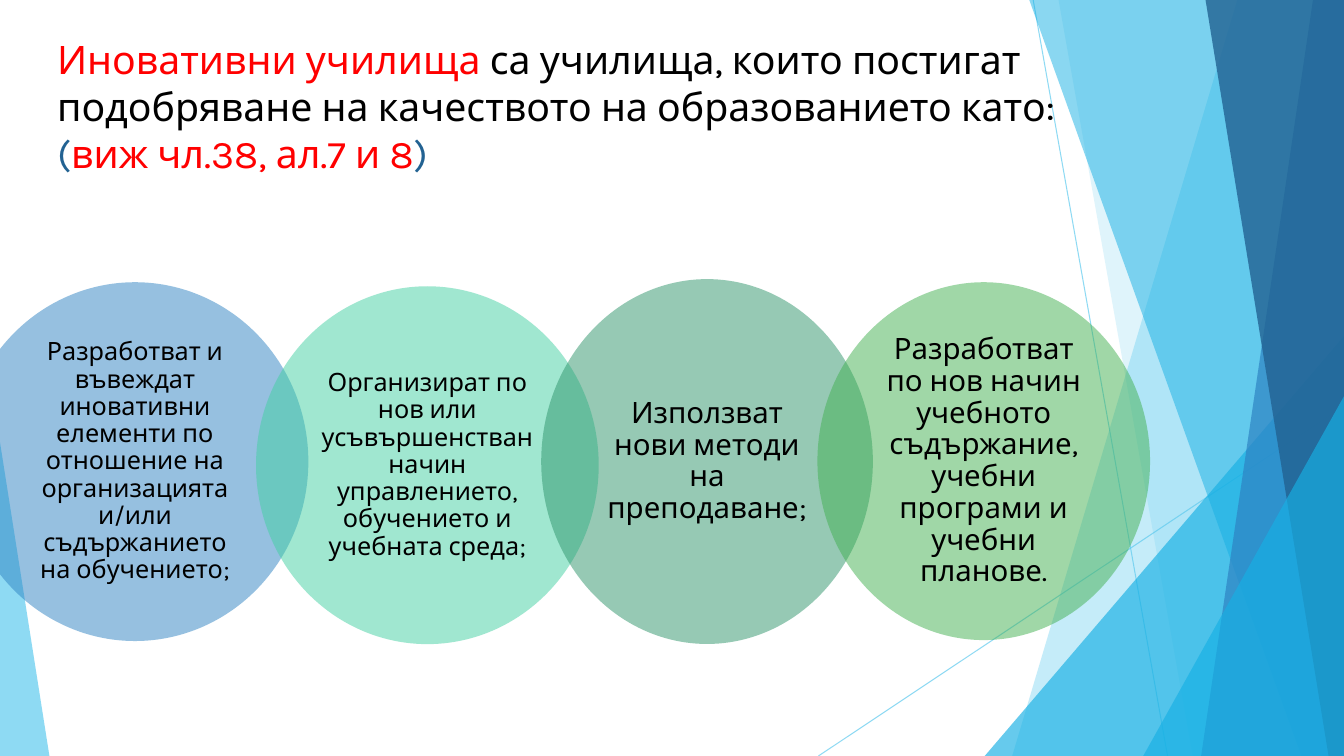
from dataclasses import dataclass

from lxml.etree import SubElement
from pptx import Presentation
from pptx.dml.color import RGBColor
from pptx.enum.shapes import MSO_CONNECTOR as Link, MSO_SHAPE as Preset
from pptx.enum.text import MSO_ANCHOR as Anchor, PP_ALIGN as Align
from pptx.oxml.ns import qn
from pptx.util import Pt

WIDTH, HEIGHT = 960, 540
BAND_TOP = -0.7
FONT = "Karla"
COLORS = {
    "black": "000000", "red": "FF0000", "sky": "5FCBEF", "cyan": "17B0E4",
    "blue": "2E83C3", "navy": "226292", "mint": "42D0A2", "teal": "2E946B",
    "green": "42B051",
}


@dataclass
class Ray:
    x1: float
    y1: float
    x2: float
    y2: float


@dataclass
class Band:
    top_x: float
    bottom_x: float
    color: str
    opacity: int


@dataclass
class Corner:
    left: float
    top: float
    width: float
    apex: float
    color: str
    opacity: int


@dataclass
class Circle:
    left: float
    top: float
    width: float
    height: float
    color: str
    size: float
    text: str


RAYS = [Ray(738, 0, 834, HEIGHT), Ray(WIDTH, 290, 584.6, HEIGHT)]
FACETS = [
    Band(884, 723, "sky", 36),
    Band(756, 852, "sky", 20),
    Corner(703.4, 240, 256.6, 1, "cyan", 66),
    Band(735, 929.5, "cyan", 50),
    Band(938, 858, "blue", 70),
    Band(861, 949, "navy", 80),
    Corner(816.6, 283, 143.4, 1, "cyan", 66),
    Corner(0, 316, 35.3, 0, "sky", 70),
]
TITLE = [
    ("Иновативни училища ", "red"),
    ("са училища, които постигат подобряване на качеството на образованието като:", "black"),
    None,
    ("(", "navy"),
    ("виж чл.38, ал.7 и 8", "red"),
    (")", "navy"),
]
CIRCLES = [
    Circle(-27.4, 201.6, 247.7, 256.3, "blue", 18,
           "Разработват и въвеждат иновативни елементи по отношение на "
           "организацията и/или съдържанието на обучението;"),
    Circle(182.9, 204.5, 244.8, 255.6, "mint", 18,
           "Организират по нов или усъвършенстван начин управлението, "
           "обучението и учебната среда;"),
    Circle(386.6, 199.4, 236.9, 260.6, "teal", 21,
           "Използват нови методи на преподаване;"),
    Circle(583.9, 201.6, 237.6, 255.6, "green", 21,
           "Разработват по нов начин учебното съдържание, учебни програми "
           "и учебни планове."),
]


def rgb(color: str) -> RGBColor:
    return RGBColor.from_string(COLORS[color])


def set_color(fill, color: str, opacity: int) -> None:
    fill.solid()
    fill.fore_color.rgb = rgb(color)


def set_opacity(shape, opacity: int) -> None:
    tag = next(shape.element.spPr.iter(qn("a:srgbClr")))
    SubElement(tag, qn("a:alpha")).set("val", str(opacity * 1000))


def paint(shape, color: str, opacity: int) -> None:
    shape.fill.solid()
    shape.fill.fore_color.rgb = rgb(color)
    set_opacity(shape, opacity)
    shape.line.fill.background()
    shape.shadow.inherit = False


def add_span(para, text: str, size: float, color: str) -> None:
    span = para.add_run()
    span.text = text
    span.font.name = FONT
    span.font.size = Pt(size)
    span.font.color.rgb = rgb(color)


def draw_ray(page, ray: Ray) -> None:
    line = page.shapes.add_connector(
        Link.STRAIGHT, Pt(ray.x1), Pt(ray.y1), Pt(ray.x2), Pt(ray.y2))
    line.line.width = Pt(0.75)
    line.line.color.rgb = rgb("sky")
    set_opacity(line, 70)
    SubElement(line.element.spPr, qn("a:effectLst"))


def draw_band(page, band: Band) -> None:
    outline = page.shapes.build_freeform(Pt(band.top_x), Pt(BAND_TOP))
    corners = [(WIDTH, BAND_TOP), (WIDTH, HEIGHT), (band.bottom_x, HEIGHT)]
    outline.add_line_segments([(Pt(x), Pt(y)) for x, y in corners], close=True)
    paint(outline.convert_to_shape(), band.color, band.opacity)


def draw_corner(page, corner: Corner) -> None:
    shape = page.shapes.add_shape(
        Preset.ISOSCELES_TRIANGLE, Pt(corner.left), Pt(corner.top),
        Pt(corner.width), Pt(HEIGHT - corner.top))
    shape.adjustments[0] = corner.apex
    paint(shape, corner.color, corner.opacity)


def draw_title(page) -> None:
    box = page.shapes.add_textbox(Pt(33.8), Pt(21.6), Pt(736.6), Pt(141))
    box.text_frame.word_wrap = True
    para = box.text_frame.paragraphs[0]
    for part in TITLE:
        if part is None:
            para.add_line_break()
        else:
            text, color = part
            add_span(para, text, 28, color)


def draw_circle(page, circle: Circle) -> None:
    shape = page.shapes.add_shape(
        Preset.OVAL, Pt(circle.left), Pt(circle.top),
        Pt(circle.width), Pt(circle.height))
    paint(shape, circle.color, 50)
    frame = shape.text_frame
    frame.word_wrap = True
    frame.vertical_anchor = Anchor.MIDDLE
    frame.margin_left = frame.margin_right = Pt(10.8)
    frame.margin_top = frame.margin_bottom = Pt(2)
    para = frame.paragraphs[0]
    para.alignment = Align.CENTER
    para.line_spacing = 0.9
    add_span(para, circle.text, circle.size, "black")


def main() -> None:
    deck = Presentation()
    deck.slide_width, deck.slide_height = Pt(WIDTH), Pt(HEIGHT)
    page = deck.slides.add_slide(deck.slide_layouts[6])
    for ray in RAYS:
        draw_ray(page, ray)
    for facet in FACETS:
        if isinstance(facet, Band):
            draw_band(page, facet)
        else:
            draw_corner(page, facet)
    draw_title(page)
    for circle in CIRCLES:
        draw_circle(page, circle)
    deck.save("out.pptx")


if __name__ == "__main__":
    main()
